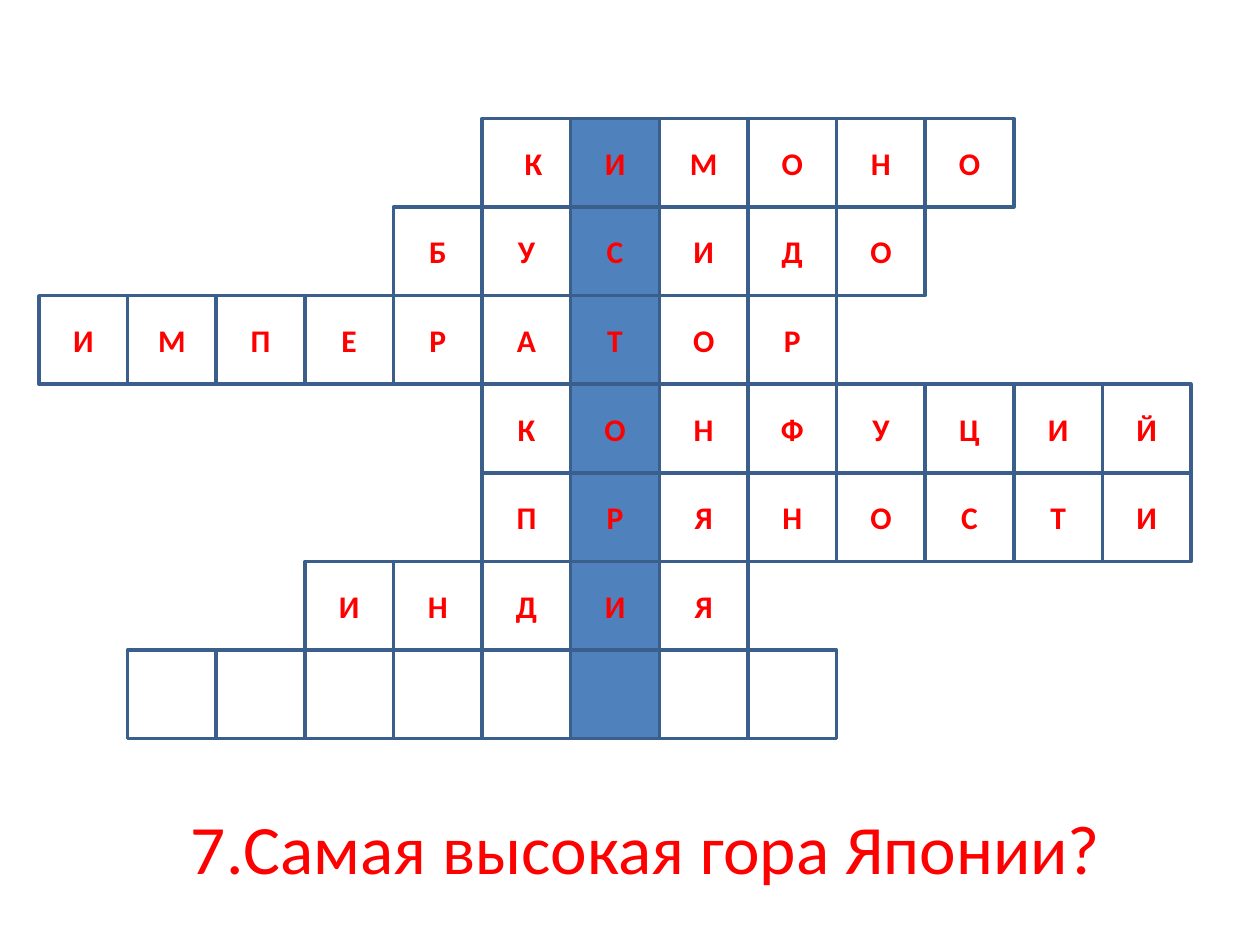
from dataclasses import dataclass
from typing import Sequence

from pptx import Presentation
from pptx.dml.color import RGBColor
from pptx.enum.shapes import MSO_SHAPE
from pptx.enum.text import MSO_ANCHOR, PP_ALIGN
from pptx.slide import Slide
from pptx.text.text import TextFrame
from pptx.util import Inches, Pt

RECTANGLE = MSO_SHAPE.RECTANGLE
MIDDLE = MSO_ANCHOR.MIDDLE
CENTER = PP_ALIGN.CENTER

WHITE = RGBColor(0xFF, 0xFF, 0xFF)
RED = RGBColor(0xFF, 0x00, 0x00)
BLUE = RGBColor(0x4F, 0x81, 0xBD)
BORDER = RGBColor(0x3A, 0x5F, 0x8C)

FONT = "Calibri"
KEY_LEFT = 4.53
GRID_TOP = 0.94
PITCH = 4.22 / 6


@dataclass(frozen=True)
class Answer:
    letters: Sequence[str]
    key_index: int
    first_inset: float = 0.1


ANSWERS = (
    Answer("КИМОНО", 1, first_inset=0.21),
    Answer("БУСИДО", 2),
    Answer("ИМПЕРАТОР", 6),
    Answer("КОНФУЦИЙ", 1),
    Answer("ПРЯНОСТИ", 1),
    Answer("ИНДИЯ", 3),
    Answer([""] * 8, 5),
)


def set_text(text_frame: TextFrame, text: str, size: float, bold: bool) -> None:
    text_frame.text = text
    text_frame.word_wrap = True
    text_frame.vertical_anchor = MIDDLE
    paragraph = text_frame.paragraphs[0]
    paragraph.alignment = CENTER
    for run in paragraph.runs:
        run.font.name = FONT
        run.font.size = Pt(size)
        run.font.bold = bold
        run.font.color.rgb = RED


def add_cell(slide: Slide, row: int, offset: int, letter: str, inset: float) -> None:
    shape = slide.shapes.add_shape(
        RECTANGLE,
        Inches(KEY_LEFT + offset * PITCH),
        Inches(GRID_TOP + row * PITCH),
        Inches(PITCH),
        Inches(PITCH),
    )
    shape.shadow.inherit = False
    shape.fill.solid()
    shape.fill.fore_color.rgb = WHITE if offset else BLUE
    shape.line.color.rgb = BORDER
    shape.line.width = Pt(2)
    shape.text_frame.margin_left = Inches(inset)
    if letter:
        set_text(shape.text_frame, letter, 18, True)


def add_answer(slide: Slide, row: int, answer: Answer) -> None:
    for index, letter in enumerate(answer.letters):
        if index != answer.key_index:
            inset = 0.1 if index else answer.first_inset
            add_cell(slide, row, index - answer.key_index, letter, inset)


def add_question(slide: Slide, text: str) -> None:
    text_box = slide.shapes.add_textbox(
        Inches(0.65), Inches(6.32), Inches(8.95), Inches(0.8)
    )
    set_text(text_box.text_frame, text, 39.6, False)


def main() -> None:
    presentation = Presentation()
    presentation.slide_width = Inches(10)
    presentation.slide_height = Inches(7.5)
    slide = presentation.slides.add_slide(presentation.slide_layouts[6])

    for row, answer in enumerate(ANSWERS):
        add_cell(slide, row, 0, answer.letters[answer.key_index], 0.1)
    for row, answer in enumerate(ANSWERS):
        add_answer(slide, row, answer)
    add_question(slide, "7.Самая высокая гора Японии?")

    presentation.save("out.pptx")


if __name__ == "__main__":
    main()
